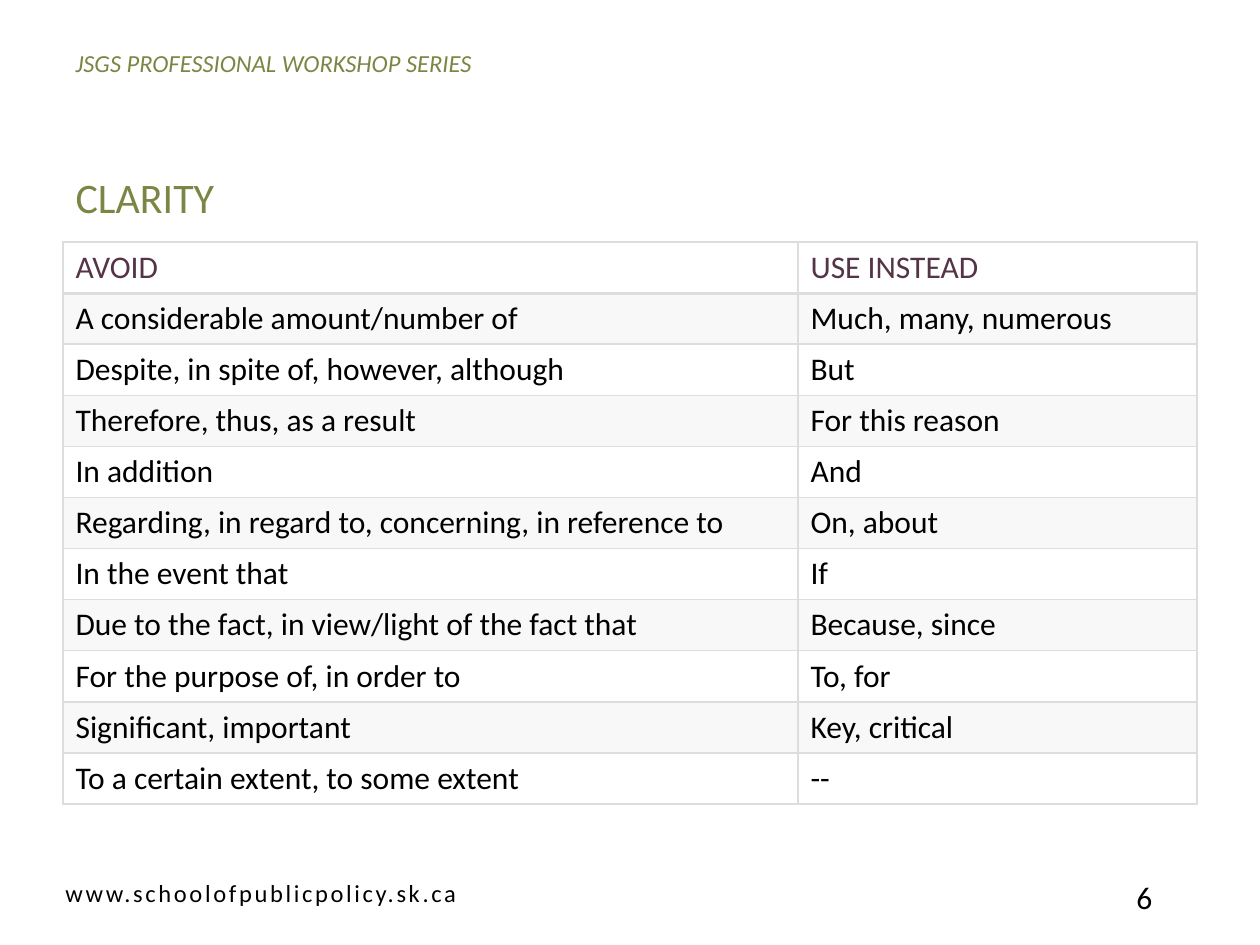
from typing import NamedTuple

from pptx import Presentation
from pptx.dml.color import RGBColor
from pptx.enum.text import MSO_ANCHOR, MSO_AUTO_SIZE, PP_ALIGN
from pptx.oxml import parse_xml
from pptx.oxml.ns import nsdecls, qn
from pptx.util import Emu, Pt

SCALE = 914400 / 126  # EMU in one px
FONT = "Calibri"
COLORS = {
    "text": "000000",
    "green": "7B8644",
    "plum": "553447",
    "grey": "DCDDDF",
}


class Box(NamedTuple):
    x: int
    y: int
    w: int
    h: int


class Phrase(NamedTuple):
    avoid: str
    use: str


PHRASES = [
    Phrase("AVOID", "USE INSTEAD"),
    Phrase("A considerable amount/number of", "Much, many, numerous"),
    Phrase("Despite, in spite of, however, although", "But"),
    Phrase("Therefore, thus, as a result", "For this reason"),
    Phrase("In addition", "And"),
    Phrase("Regarding, in regard to, concerning, in reference to", "On, about"),
    Phrase("In the event that", "If"),
    Phrase("Due to the fact, in view/light of the fact that", "Because, since"),
    Phrase("For the purpose of, in order to", "To, for"),
    Phrase("Significant, important", "Key, critical"),
    Phrase("To a certain extent, to some extent", "--"),
]
COL_WIDTHS = (735, 399)
ROW_HEIGHT = 51


def px(n: int) -> Emu:
    return Emu(round(n * SCALE))


def emu(box: Box) -> list[Emu]:
    return [px(n) for n in box]


def write(tf, text: str, size=18, color="text", italic=False, spacing=0):
    """Fill a text frame with one left-aligned paragraph and return it."""
    tf.word_wrap = True
    tf.vertical_anchor = MSO_ANCHOR.TOP
    p = tf.paragraphs[0]
    p.alignment = PP_ALIGN.LEFT
    p.space_before = Pt(0)
    r = p.add_run()
    r.text = text
    r.font.name = FONT
    r.font.size = Pt(size)
    r.font.bold = False
    r.font.italic = italic
    r.font.color.rgb = RGBColor.from_string(COLORS[color])
    if spacing:
        r.font._element.set("spc", str(round(spacing * 100)))
    return p


def fill_placeholder(sp, box: Box, text: str, **fmt):
    sp.left, sp.top, sp.width, sp.height = emu(box)
    sp.text_frame.auto_size = MSO_AUTO_SIZE.NONE
    return write(sp.text_frame, text, **fmt)


def add_text(slide, box: Box, text: str, **fmt) -> None:
    write(slide.shapes.add_textbox(*emu(box)).text_frame, text, **fmt)


def set_borders(cell, top=1, bottom=1) -> None:
    """Line all four sides; the lines go before the fill."""
    tc_pr = cell._tc.get_or_add_tcPr()
    sides = {"lnL": 1, "lnR": 1, "lnT": top, "lnB": bottom}
    for i, (tag, width) in enumerate(sides.items()):
        tc_pr.insert(i, parse_xml(
            f'<a:{tag} {nsdecls("a")} w="{Pt(width)}"><a:solidFill>'
            f'<a:srgbClr val="{COLORS["grey"]}"/></a:solidFill></a:{tag}>'))


def set_band(cell, alpha: int) -> None:
    cell.fill.solid()
    cell.fill.fore_color.rgb = RGBColor.from_string(COLORS["grey"])
    clr = cell._tc.tcPr.find(f'{qn("a:solidFill")}/{qn("a:srgbClr")}')
    clr.append(parse_xml(f'<a:alpha {nsdecls("a")} val="{alpha * 1000}"/>'))


def add_phrase_table(slide, x: int, y: int) -> None:
    box = Box(x, y, sum(COL_WIDTHS), ROW_HEIGHT * len(PHRASES))
    table = slide.shapes.add_table(len(PHRASES), 2, *emu(box)).table
    table.first_row = table.horz_banding = False
    for col, width in zip(table.columns, COL_WIDTHS):
        col.width = px(width)
    for i, phrase in enumerate(PHRASES):
        table.rows[i].height = px(ROW_HEIGHT)
        for j, text in enumerate(phrase):
            cell = table.cell(i, j)
            write(cell.text_frame, text, color="text" if i else "plum")
            if i % 2:
                set_band(cell, alpha=20)
            else:
                cell.fill.background()
            set_borders(cell, top=2 if i == 1 else 1, bottom=1 if i else 2)


def main() -> None:
    prs = Presentation()
    prs.slide_width, prs.slide_height = px(1260), px(945)
    slide = prs.slides.add_slide(prs.slide_layouts[1])

    # Series title and topic
    fill_placeholder(slide.shapes.title, Box(63, 42, 1134, 63),
                     "JSGS PROFESSIONAL WORKSHOP SERIES",
                     size=14, color="green", italic=True)
    p = fill_placeholder(slide.placeholders[1], Box(63, 165, 1134, 66),
                         "CLARITY", size=24, color="green")
    p_pr = p._p.get_or_add_pPr()
    p_pr.set("marL", str(px(48)))
    p_pr.set("indent", str(-px(48)))
    p_pr.append(parse_xml(f'<a:buNone {nsdecls("a")}/>'))

    # Wordy phrases and their replacements
    add_phrase_table(slide, 63, 242)

    # Footer
    add_text(slide, Box(53, 872, 494, 43), "www.schoolofpublicpolicy.sk.ca",
             size=14, spacing=1.5)
    add_text(slide, Box(1124, 872, 73, 50), "6")

    prs.save("out.pptx")


if __name__ == "__main__":
    main()
